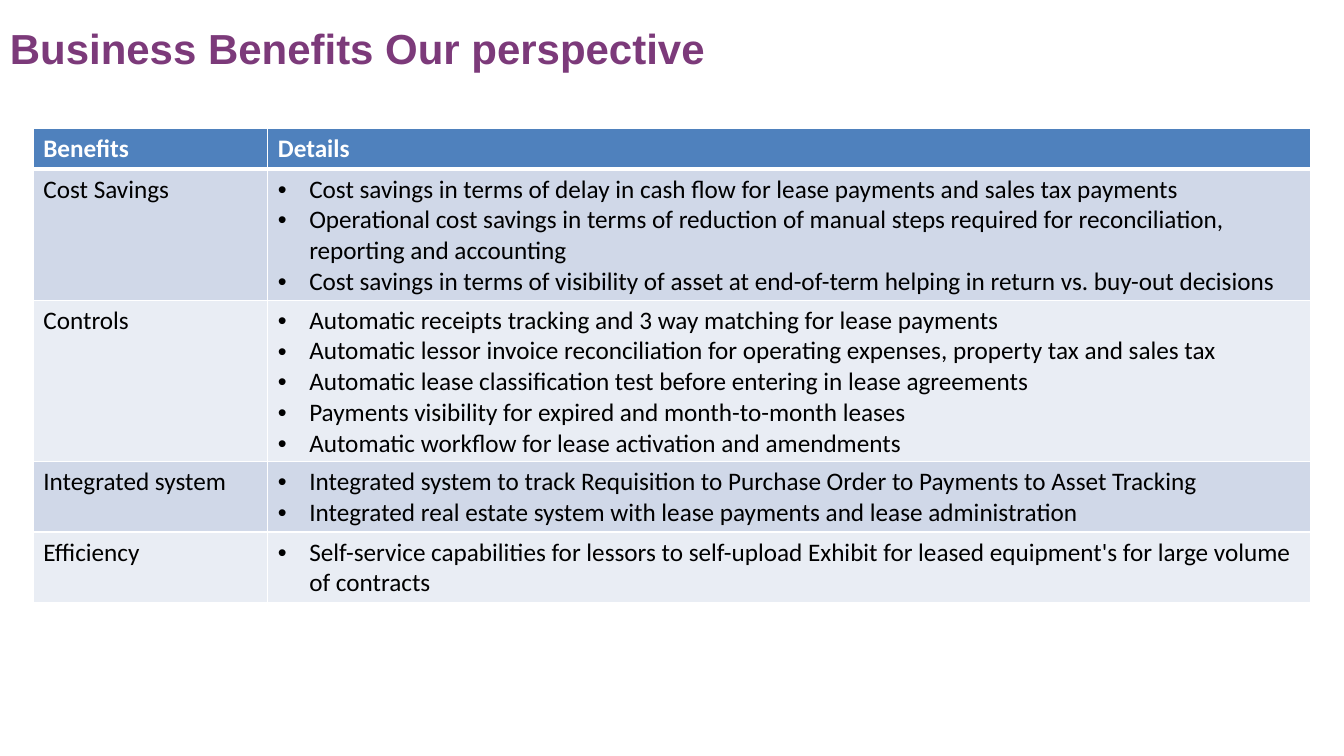
from dataclasses import dataclass

from lxml.etree import SubElement
from pptx import Presentation
from pptx.dml.color import RGBColor
from pptx.enum.text import MSO_ANCHOR
from pptx.oxml.ns import qn
from pptx.util import Cm, Pt


@dataclass(frozen=True)
class Theme:
    title: str = "7C3A7A"
    head: str = "4F81BD"
    bands: tuple = ("D0D8E8", "E9EDF4")
    light: str = "FFFFFF"
    dark: str = "000000"
    title_font: str = "Arial"
    body_font: str = "Calibri"
    title_size: int = 30
    body_size: int = 18


THEME = Theme()

ROWS = [
    ("Cost Savings", [
        "Cost savings in terms of delay in cash flow for lease payments and sales tax payments",
        "Operational cost savings in terms of reduction of manual steps required for "
        "reconciliation, reporting and accounting",
        "Cost savings in terms of visibility of asset at end-of-term helping in return "
        "vs. buy-out decisions",
    ]),
    ("Controls", [
        "Automatic receipts tracking and 3 way matching for lease payments",
        "Automatic lessor invoice reconciliation for operating expenses, property tax and sales tax",
        "Automatic lease classification test before entering in lease agreements",
        "Payments visibility for expired and month-to-month leases",
        "Automatic workflow for lease activation and amendments",
    ]),
    ("Integrated system", [
        "Integrated system to track Requisition to Purchase Order to Payments to Asset Tracking",
        "Integrated real estate system with lease payments and lease administration",
    ]),
    ("Efficiency", [
        "Self-service capabilities for lessors to self-upload Exhibit for leased "
        "equipment's for large volume of contracts",
    ]),
]


def style(para, face, size, color, bold=False):
    for run in para.runs:
        font = run.font
        font.name = face
        font.size = Pt(size)
        font.bold = bold
        font.color.rgb = RGBColor.from_string(color)


def add_title(slide, text):
    box = slide.shapes.add_textbox(Cm(0), Cm(0), Cm(24.66), Cm(1.96))
    frame = box.text_frame
    frame.word_wrap = True
    frame.vertical_anchor = MSO_ANCHOR.BOTTOM
    frame.text = text
    style(frame.paragraphs[0], THEME.title_font, THEME.title_size, THEME.title, True)


def add_bullet(para):
    props = para._p.get_or_add_pPr()
    props.set("marL", str(Cm(0.79)))
    props.set("indent", str(-Cm(0.79)))
    SubElement(props, qn("a:buFont"), typeface="Arial")
    SubElement(props, qn("a:buChar"), char="•")


def set_edges(cell, top, bottom):
    props = cell._tc.get_or_add_tcPr()
    for side, width in zip("LRTB", (1, 1, top, bottom)):
        line = SubElement(props, qn("a:ln" + side), w=str(Pt(width)))
        fill = SubElement(line, qn("a:solidFill"))
        SubElement(fill, qn("a:srgbClr"), val=THEME.light)


def fill_cell(cell, lines, row, bullets=False):
    head = row == 0
    set_edges(cell, 3 if row == 1 else 1, 3 if head else 1)
    back = THEME.head if head else THEME.bands[(row - 1) % 2]
    cell.fill.solid()
    cell.fill.fore_color.rgb = RGBColor.from_string(back)
    cell.text_frame.text = "\n".join(lines)
    for para in cell.text_frame.paragraphs:
        if bullets:
            add_bullet(para)
        color = THEME.light if head else THEME.dark
        style(para, THEME.body_font, THEME.body_size, color, head)


def add_grid(slide, heads, rows):
    widths = Cm(5.91), Cm(26.29)
    high = Cm(1.03)
    count = len(rows) + 1
    frame = slide.shapes.add_table(
        count, len(widths), Cm(0.84), Cm(3.23), sum(widths), high * count)
    table = frame.table
    for col, width in zip(table.columns, widths):
        col.width = width
    for col, head in enumerate(heads):
        fill_cell(table.cell(0, col), [head], 0)
    for row, (name, items) in enumerate(rows, 1):
        fill_cell(table.cell(row, 0), [name], row)
        fill_cell(table.cell(row, 1), items, row, bullets=True)


def main():
    deck = Presentation()
    deck.slide_width = Cm(33.87)
    deck.slide_height = Cm(19.05)
    slide = deck.slides.add_slide(deck.slide_layouts[6])
    add_title(slide, "Business Benefits Our perspective")
    add_grid(slide, ("Benefits", "Details"), ROWS)
    deck.save("out.pptx")


if __name__ == "__main__":
    main()
